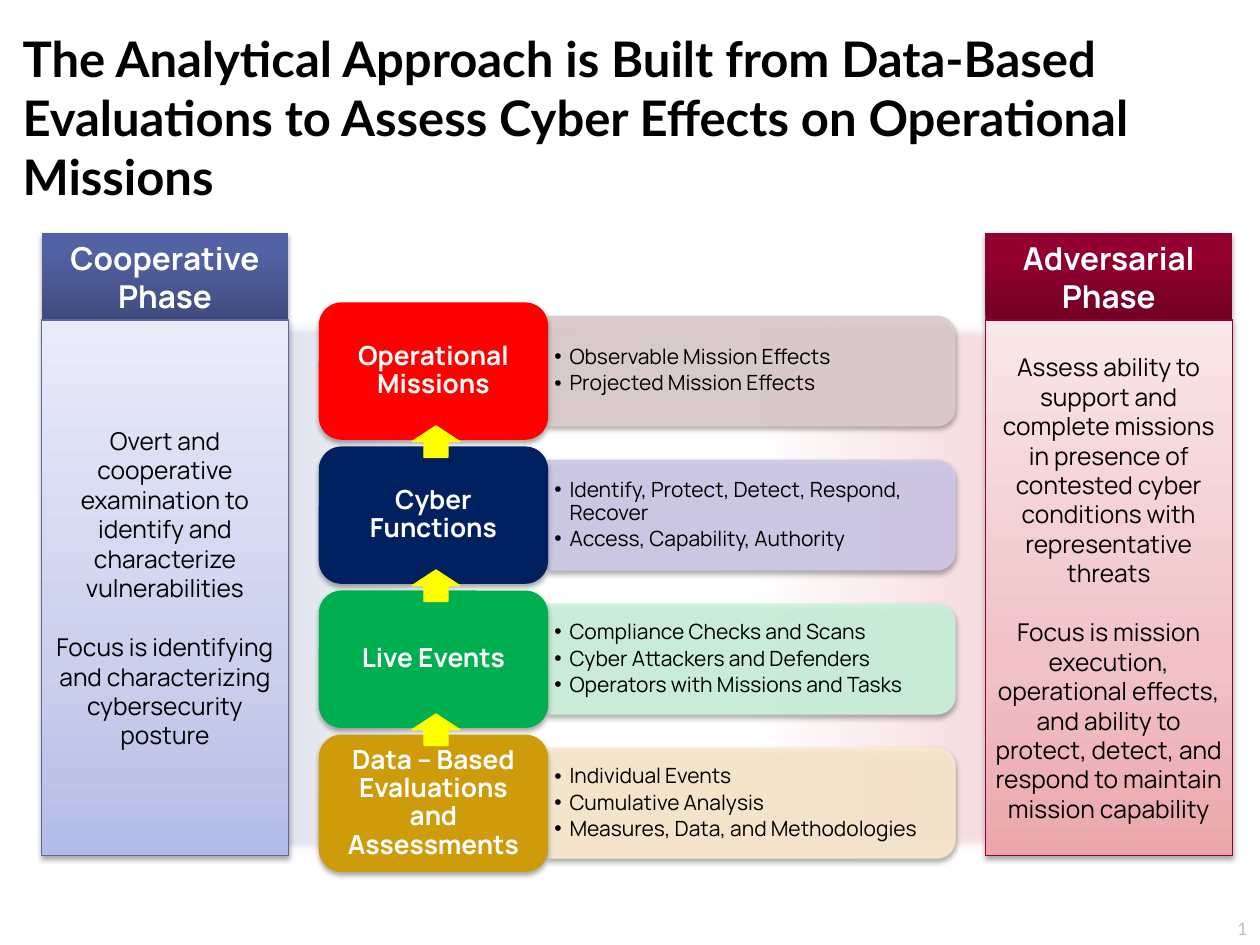
"""Build the slide on the analytical approach to cyber assessment."""
from dataclasses import dataclass
from typing import Optional

import lxml.etree as etree
import pptx
import pptx.dml.color
import pptx.enum.shapes
import pptx.enum.text
import pptx.oxml.ns
import pptx.util

Inches, Pt = pptx.util.Inches, pptx.util.Pt
Shape = pptx.enum.shapes.MSO_SHAPE
Align, Anchor = pptx.enum.text.PP_ALIGN, pptx.enum.text.MSO_ANCHOR
qn = pptx.oxml.ns.qn
Stops = tuple[tuple[int, str], ...]


@dataclass(frozen=True)
class Theme:
    title_font: str = "Lato"
    body_font: str = "Manrope"
    black: str = "000000"
    white: str = "FFFFFF"
    grey: str = "BFBFBF"
    arrow: str = "FFFF00"
    band: Stops = ((0, "DFE1EC"), (46, "FFFFFF"), (66, "FFFFFF"), (100, "F4DADD"))
    title_size: float = 28
    header_size: float = 18
    card_size: float = 15
    phase_size: float = 14
    bullet_size: float = 12
    number_size: float = 10


@dataclass(frozen=True)
class Phase:
    left: float
    name: str
    header: Stops
    panel: Stops
    line: str
    paragraphs: tuple[str, str]


@dataclass(frozen=True)
class Layer:
    name: str
    color: str
    bar: str
    bullets: tuple[str, ...]


THEME = Theme()
TOP, PITCH = 2.4, 3.43 / 3
TITLE = ("The Analytical Approach is Built from Data-Based Evaluations "
         "to Assess Cyber Effects on Operational Missions")
PHASES = (
    Phase(0.33, "Cooperative Phase",
          ((0, "404B7E"), (80, "5362A3"), (100, "5261A6")),
          ((0, "B4BBE7"), (35, "CACFED"), (100, "EAECF9")), "5B689D",
          ("Overt and cooperative examination to identify and characterize vulnerabilities",
           "Focus is identifying and characterizing cybersecurity posture")),
    Phase(7.82, "Adversarial\vPhase",
          ((0, "720024"), (80, "94002F"), (100, "95002F")),
          ((0, "EBA6AB"), (35, "F0C1C5"), (100, "FAE7E8")), "960030",
          ("Assess ability to support and complete missions in presence of contested "
           "cyber conditions with representative threats",
           "Focus is mission execution, operational effects, and ability to protect, "
           "detect, and respond to maintain mission capability")),
)
LAYERS = (
    Layer("Operational Missions", "FF0000", "DDCCCE",
          ("Observable Mission Effects", "Projected Mission Effects")),
    Layer("Cyber Functions", "002060", "CFCAE9",
          ("Identify, Protect, Detect, Respond, Recover", "Access, Capability, Authority")),
    Layer("Live Events", "00B050", "CBF3DB",
          ("Compliance Checks and Scans", "Cyber Attackers and Defenders",
           "Operators with Missions and Tasks")),
    Layer("Data – Based Evaluations and Assessments", "CE9B0A", "FBEACE",
          ("Individual Events", "Cumulative Analysis", "Measures, Data, and Methodologies")),
)


def rgb(color: str) -> pptx.dml.color.RGBColor:
    return pptx.dml.color.RGBColor.from_string(color)


def add(parent, tag: str, **attrs):
    return etree.SubElement(parent, qn(tag), {k: str(v) for k, v in attrs.items()})


def place(shape, left: float, top: float, width: float, height: float) -> None:
    shape.left, shape.top = Inches(left), Inches(top)
    shape.width, shape.height = Inches(width), Inches(height)


def add_box(s, kind, left: float, top: float, width: float, height: float,
            fill: Optional[str] = None, line: Optional[str] = None):
    shape = s.shapes.add_shape(kind, Inches(left), Inches(top), Inches(width), Inches(height))
    shape.shadow.inherit = False
    if fill:
        shape.fill.solid()
        shape.fill.fore_color.rgb = rgb(fill)
    if line:
        shape.line.color.rgb = rgb(line)
        shape.line.width = Pt(0.75)
    else:
        shape.line.fill.background()
    return shape


def set_gradient(shape, stops: Stops, angle: int) -> None:
    props = shape.element.spPr
    grad = etree.Element(qn("a:gradFill"), rotWithShape="1")
    stop_list = add(grad, "a:gsLst")
    for position, color in stops:
        add(add(stop_list, "a:gs", pos=position * 1000), "a:srgbClr", val=color)
    add(grad, "a:lin", ang=angle * 60000, scaled=0)
    props.find(qn("a:prstGeom")).addnext(grad)


def add_shadow(shape) -> None:
    effects = shape.element.spPr.find(qn("a:effectLst"))
    shadow = add(effects, "a:outerShdw", blurRad=Pt(3.1), dist=Pt(1.8),
                 dir=5400000, rotWithShape=0)
    add(add(shadow, "a:srgbClr", val=THEME.black), "a:alpha", val=35000)


def format_text(shape, size: float, color: str, font: str = THEME.body_font,
                bold: bool = False, align=Align.CENTER, anchor=Anchor.MIDDLE,
                spacing: float = 1, margins: tuple[float, float] = (0.07, 0.04)) -> None:
    tf = shape.text_frame
    tf.word_wrap = True
    tf.auto_size = pptx.enum.text.MSO_AUTO_SIZE.NONE
    tf.vertical_anchor = anchor
    tf.margin_left = tf.margin_right = Inches(margins[0])
    tf.margin_top = tf.margin_bottom = Inches(margins[1])
    for p in tf.paragraphs:
        p.alignment, p.line_spacing, p.space_before = align, spacing, Pt(0)
        for r in p.runs:
            r.font.name, r.font.size, r.font.bold = font, Pt(size), bold
            r.font.color.rgb = rgb(color)


def draw_background(s) -> None:
    for left, width, stops in ((2.17, 5.75, THEME.band), (2.18, 3.32, THEME.band[:2])):
        band = add_box(s, Shape.RECTANGLE, left, 2.54, width, 4.25)
        set_gradient(band, stops, 0)
        add(band.element.spPr.find(qn("a:effectLst")), "a:softEdge", rad=Pt(5))


def draw_layer(s, layer: Layer, top: float, body) -> None:
    length, depth = 3.23, 0.87
    bar = add_box(s, Shape.ROUND_2_SAME_RECTANGLE, 4.35 + (length - depth) / 2,
                  top + 0.545 - length / 2, depth, length, layer.bar, layer.bar)
    bar.rotation = 90
    for color in bar.element.spPr.findall(".//" + qn("a:srgbClr")):
        add(color, "a:alpha", val=90000)
    card = add_box(s, Shape.ROUNDED_RECTANGLE, 2.53, top, 1.82, 1.09, layer.color)
    card.text_frame.text = layer.name
    format_text(card, THEME.card_size, THEME.white, bold=True, spacing=0.9,
                margins=(0.06, 0.03))
    for shape in (bar, card):
        add_shadow(shape)
    place(body, 4.35, top + 0.15, 3.19, 0.79)
    body.text_frame.text = "\n".join(layer.bullets)
    for p in body.text_frame.paragraphs:
        props = p._p.get_or_add_pPr()
        props.set("marL", str(Inches(0.12)))
        props.set("indent", str(-Inches(0.12)))
        add(props, "a:buFont", typeface="Arial")
        add(props, "a:buChar", char="•")
        p.space_after = Pt(2)
    format_text(body, THEME.bullet_size, THEME.black, align=Align.LEFT, spacing=0.9,
                margins=(0.05, 0.03))
    s.shapes.element.append(body.element)


def draw_phase(s, phase: Phase) -> None:
    header = add_box(s, Shape.RECTANGLE, phase.left, 1.85, 1.96, 0.69)
    set_gradient(header, phase.header, 270)
    header.text_frame.text = phase.name
    format_text(header, THEME.header_size, THEME.white, bold=True)
    panel = add_box(s, Shape.RECTANGLE, phase.left, 2.54, 1.96, 4.25, line=phase.line)
    set_gradient(panel, phase.panel, 270)
    panel.text_frame.text = "\n".join(phase.paragraphs)
    format_text(panel, THEME.phase_size, THEME.black)
    panel.text_frame.paragraphs[1].space_before = Pt(17)
    for shape in (header, panel):
        add_shadow(shape)


def draw_number(s) -> None:
    box = s.shapes.add_textbox(Inches(9.33), Inches(7.1), Inches(0.67), Inches(0.4))
    box.text_frame.text = "1"
    format_text(box, THEME.number_size, THEME.grey, THEME.title_font,
                align=Align.RIGHT, anchor=Anchor.BOTTOM, margins=(0.1, 0.05))


def main() -> None:
    prs = pptx.Presentation()
    prs.slide_width, prs.slide_height = Inches(10), Inches(7.5)
    s = prs.slides.add_slide(prs.slide_layouts.get_by_name("Comparison"))
    title, *bodies = s.placeholders
    place(title, 0.08, 0.18, 9.83, 1.51)
    title.text_frame.text = TITLE
    format_text(title, THEME.title_size, THEME.black, THEME.title_font, bold=True,
                align=Align.LEFT, anchor=Anchor.TOP, margins=(0.1, 0.05))
    draw_background(s)
    tops = [TOP + i * PITCH for i in range(len(LAYERS))]
    for layer, top, body in zip(LAYERS, tops, bodies):
        draw_layer(s, layer, top, body)
    draw_number(s)
    for phase in PHASES:
        draw_phase(s, phase)
    for top in tops[:-1]:
        add_box(s, Shape.UP_ARROW, 3.27, top + 0.98, 0.38, 0.25, THEME.arrow, THEME.arrow)
    prs.save("out.pptx")


if __name__ == "__main__":
    main()
